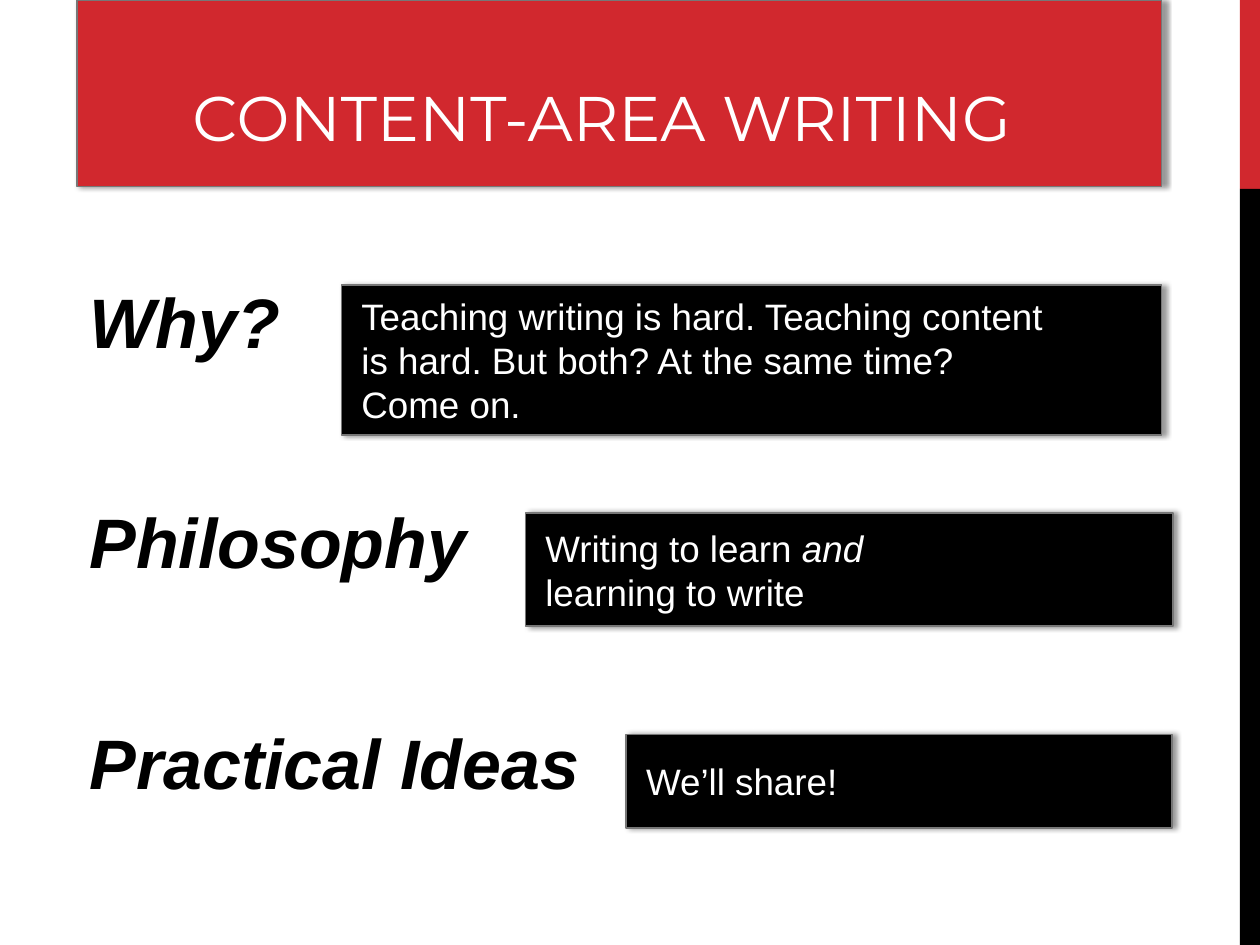
import pptx
import pptx.util
import pptx.dml.color
import pptx.enum.shapes
import pptx.enum.text
import pptx.oxml
import pptx.oxml.ns

Inches = pptx.util.Inches
Pt = pptx.util.Pt
Anchor = pptx.enum.text.MSO_ANCHOR
Align = pptx.enum.text.PP_ALIGN
RED, BLACK, WHITE, GRAY = "D1282E", "000000", "FFFFFF", "777777"


def paint(item, color):
    if hasattr(item, "solid"):
        item.solid()
        item = item.fore_color
    item.rgb = pptx.dml.color.RGBColor.from_string(color)


def add_box(place, color, framed=True):
    box = slide.shapes.add_shape(
        pptx.enum.shapes.MSO_SHAPE.RECTANGLE, *[Inches(n) for n in place])
    paint(box.fill, color)
    box.line.fill.background()
    box.shadow.inherit = False
    if framed:
        paint(box.line.fill, GRAY)
        box.line.width = Pt(1)
        shade = pptx.oxml.parse_xml(
            f'<a:outerShdw {pptx.oxml.ns.nsdecls("a")} blurRad="{Pt(3.1)}" '
            f'dist="{Pt(1.8)}" dir="0" algn="tl" rotWithShape="0">'
            '<a:srgbClr val="000000"><a:alpha val="40000"/></a:srgbClr>'
            '</a:outerShdw>')
        box._element.spPr.find(pptx.oxml.ns.qn("a:effectLst")).append(shade)
    return box


deck = pptx.Presentation()
deck.slide_width, deck.slide_height = Inches(10), Inches(7.5)
slide = deck.slides.add_slide(deck.slide_layouts[1])
title, body = slide.placeholders

backs = [
    add_box((9.84, 0, 0.16, 1.5), RED, False),
    add_box((9.84, 1.5, 0.16, 6), BLACK, False),
    add_box((0.61, 0, 8.61, 1.48), RED),
]
for back in backs:
    title._element.addprevious(back._element)

title.left, title.top = Inches(0.61), Inches(0.52)
title.width, title.height = Inches(8.33), Inches(0.75)
frame = title.text_frame
frame.text = "CONTENT-AREA WRITING"
frame.auto_size = pptx.enum.text.MSO_AUTO_SIZE.NONE
frame.vertical_anchor = Anchor.BOTTOM
para = frame.paragraphs[0]
para.alignment = Align.CENTER
font = para.runs[0].font
font.name, font.size = "Montserrat", Pt(36)
paint(font.color, WHITE)

body.left, body.top = Inches(0.61), Inches(2.11)
body.width, body.height = Inches(8.33), Inches(4.78)
frame = body.text_frame
frame.text = "Why?\nPhilosophy\nPractical Ideas"
frame.auto_size = pptx.enum.text.MSO_AUTO_SIZE.NONE
frame.vertical_anchor = Anchor.TOP
frame.margin_top = Inches(0.1)
for row, para in enumerate(frame.paragraphs):
    para.space_before = Pt(78 if row else 0)
    props = para._p.get_or_add_pPr()
    props.set("marL", "0")
    props.set("indent", "0")
    props.append(pptx.oxml.parse_xml(
        f'<a:buNone {pptx.oxml.ns.nsdecls("a")}/>'))
    font = para.runs[0].font
    font.name, font.size = "Arial", Pt(40)
    font.bold = font.italic = True
    paint(font.color, BLACK)

notes = [
    ((2.71, 2.26, 6.51, 1.19),
     [["Teaching writing is hard. Teaching content"],
      ["is hard. But both? At the same time?"],
      ["Come on."]]),
    ((4.17, 4.07, 5.14, 0.9),
     [["Writing to learn ", "and"], ["learning to write"]]),
    ((4.97, 5.83, 4.33, 0.74), [["We’ll share!"]]),
]
for place, lines in notes:
    frame = add_box(place, BLACK).text_frame
    frame.word_wrap = True
    frame.vertical_anchor = Anchor.MIDDLE
    frame.text = "\n".join(line[0] for line in lines)
    for para, line in zip(frame.paragraphs, lines):
        para.alignment = Align.LEFT
        para._p.get_or_add_pPr().set("marL", str(Inches(0.06)))
        for word in line[1:]:
            run = para.add_run()
            run.text = word
            run.font.italic = True
        for run in para.runs:
            run.font.name, run.font.size = "Arial", Pt(21)
            paint(run.font.color, WHITE)

deck.save("out.pptx")
